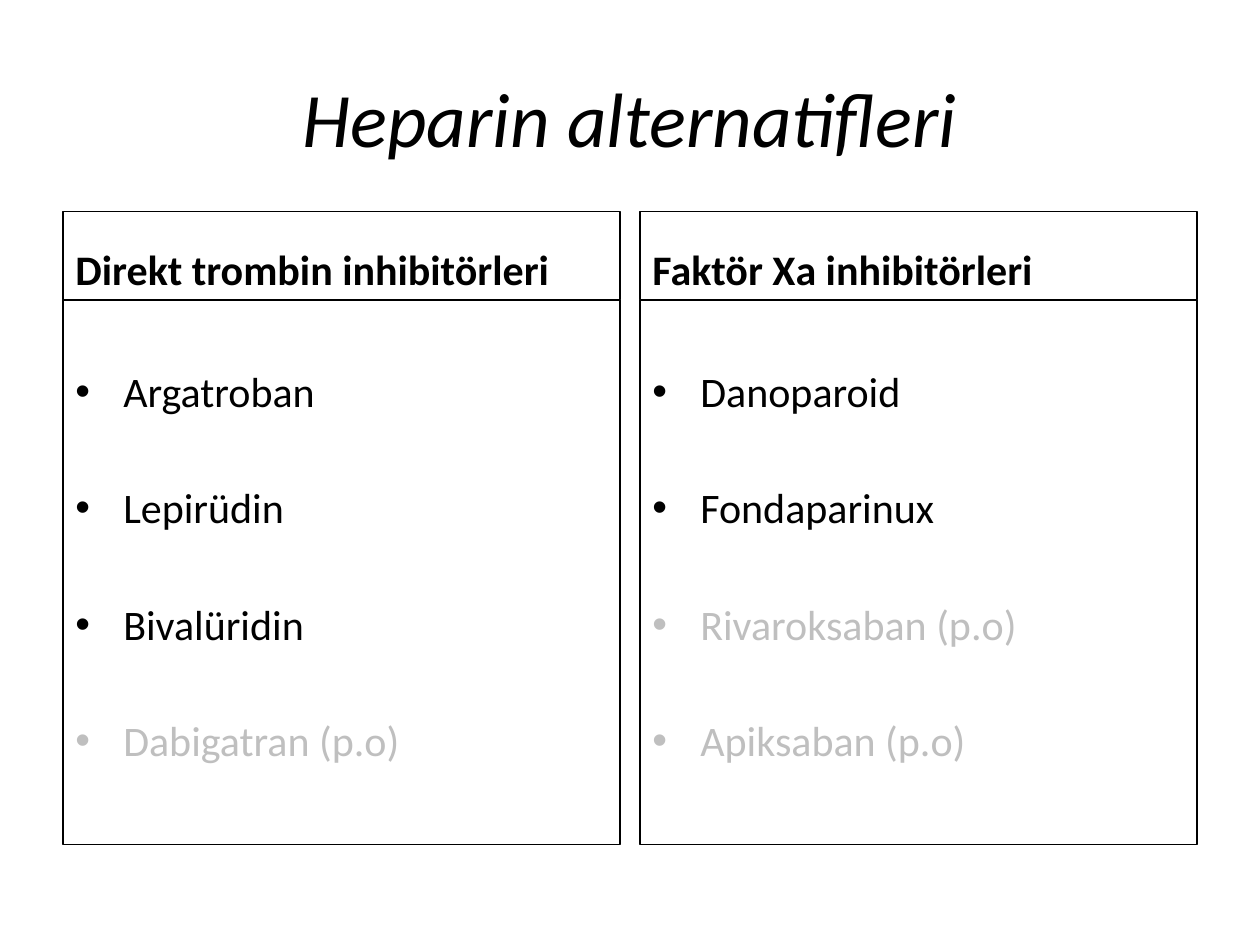
import pptx
import pptx.dml.color
import pptx.enum.shapes
import pptx.enum.text
import pptx.oxml
import pptx.oxml.ns
import pptx.util

ALIGN = pptx.enum.text.PP_ALIGN
ANCHOR = pptx.enum.text.MSO_ANCHOR
BLACK, GREY = "000000", "BFBFBF"


def color(value):
    return pptx.dml.color.RGBColor.from_string(value)


class SlideBuilder:
    """Style and current slide; lengths are units of a 100 by 75 grid."""

    font_name = "Calibri"
    title_size, body_size = 44, 24
    line_width = 0.75
    item_gap = 37.8
    bullet_indent = 0.38

    def __init__(self, deck):
        self.column = deck.slide_width / 100
        self.row = deck.slide_height / 75
        self.slide = deck.slides.add_slide(deck.slide_layouts[6])

    def place(self, left, top, width, height):
        return [round(length * unit) for length, unit in
                zip((left, top, width, height), (self.column, self.row) * 2)]

    def add_run(self, para, text, size, ink=BLACK, bold=False, italic=False):
        span = para.add_run()
        span.text = text
        font = span.font
        font.name, font.size = self.font_name, pptx.util.Pt(size)
        font.bold, font.italic = bold, italic
        font.color.rgb = color(ink)

    def add_title(self, area, text):
        box = self.slide.shapes.add_textbox(*self.place(*area))
        frame = box.text_frame
        frame.word_wrap = True
        frame.vertical_anchor = ANCHOR.MIDDLE
        para = frame.paragraphs[0]
        para.alignment = ALIGN.CENTER
        self.add_run(para, text, self.title_size, italic=True)

    def add_frame(self, area, anchor):
        box = self.slide.shapes.add_shape(
            pptx.enum.shapes.MSO_SHAPE.RECTANGLE, *self.place(*area))
        box.shadow.inherit = False
        box.fill.background()
        box.line.color.rgb = color(BLACK)
        box.line.width = pptx.util.Pt(self.line_width)
        box.text_frame.word_wrap = True
        box.text_frame.vertical_anchor = anchor
        return box.text_frame

    def add_heading(self, area, text):
        para = self.add_frame(area, ANCHOR.BOTTOM).paragraphs[0]
        para.alignment = ALIGN.LEFT
        self.add_run(para, text, self.body_size, bold=True)

    def add_bullet(self, para):
        props = para._p.get_or_add_pPr()
        indent = pptx.util.Inches(self.bullet_indent)
        props.set("marL", str(indent))
        props.set("indent", str(-indent))
        for tag, name, value in (("a:buFont", "typeface", "Arial"),
                                 ("a:buChar", "char", "•")):
            element = pptx.oxml.ns.qn(tag)
            child = props.makeelement(element, {name: value})
            props.append(child)

    def add_list(self, area, items):
        frame = self.add_frame(area, ANCHOR.TOP)
        frame.margin_top = pptx.util.Inches(0.52)
        for index, (text, ink) in enumerate(items):
            para = frame.add_paragraph() if index else frame.paragraphs[0]
            para.alignment = ALIGN.LEFT
            if index:
                para.space_before = pptx.util.Pt(self.item_gap)
            self.add_bullet(para)
            self.add_run(para, text, self.body_size, ink)


def main():
    deck = pptx.Presentation()
    deck.slide_width = pptx.util.Inches(10)
    deck.slide_height = pptx.util.Inches(7.5)
    builder = SlideBuilder(deck)

    # Title
    margin = 5
    builder.add_title((margin, 3, 100 - 2 * margin, 12.5),
                      "Heparin alternatifleri")

    # Two drug classes side by side; oral drugs are greyed out
    groups = (
        ("Direkt trombin inhibitörleri",
         (("Argatroban", BLACK), ("Lepirüdin", BLACK),
          ("Bivalüridin", BLACK), ("Dabigatran (p.o)", GREY))),
        ("Faktör Xa inhibitörleri",
         (("Danoparoid", BLACK), ("Fondaparinux", BLACK),
          ("Rivaroksaban (p.o)", GREY), ("Apiksaban (p.o)", GREY))),
    )
    width, gutter = 44.2, 1.6
    top, heading_height, list_height = 16.8, 7, 43.2
    for index, (heading, items) in enumerate(groups):
        left = margin + index * (width + gutter)
        builder.add_heading((left, top, width, heading_height), heading)
        builder.add_list((left, top + heading_height, width, list_height), items)

    deck.save("out.pptx")


if __name__ == "__main__":
    main()
